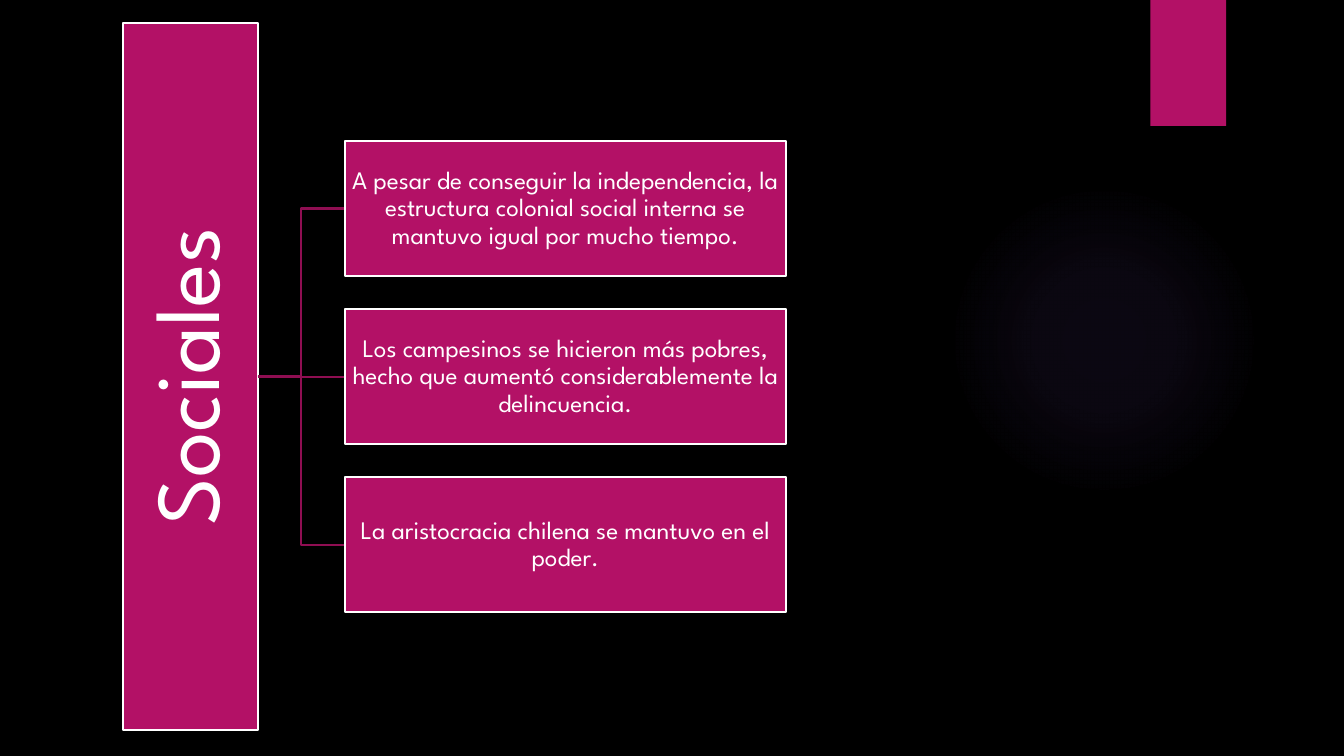
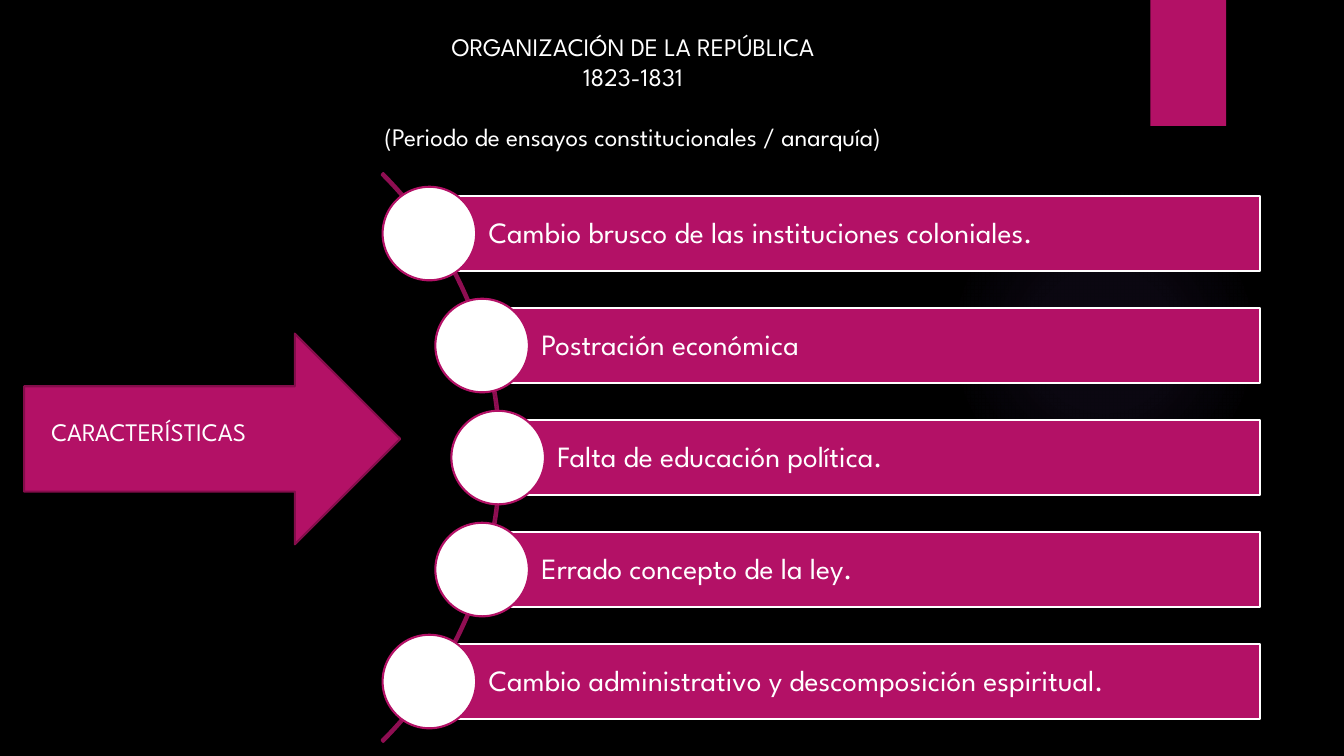
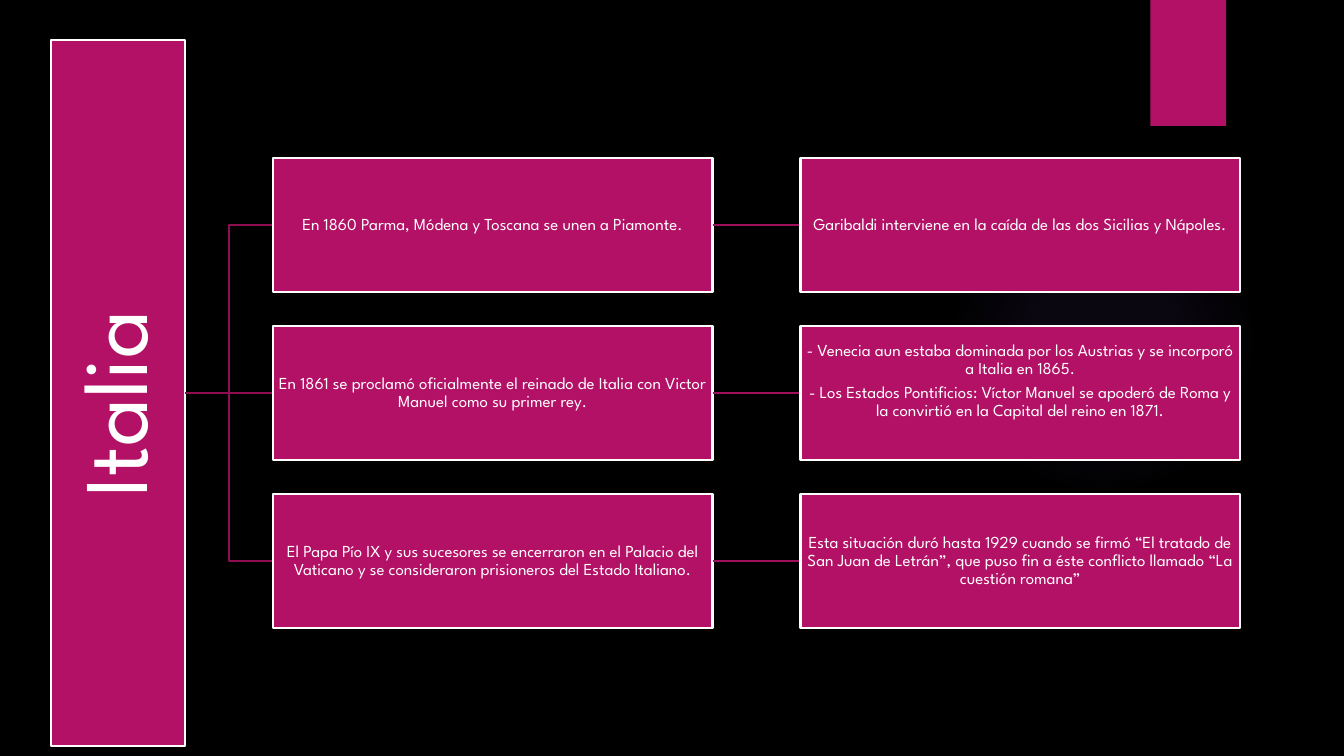
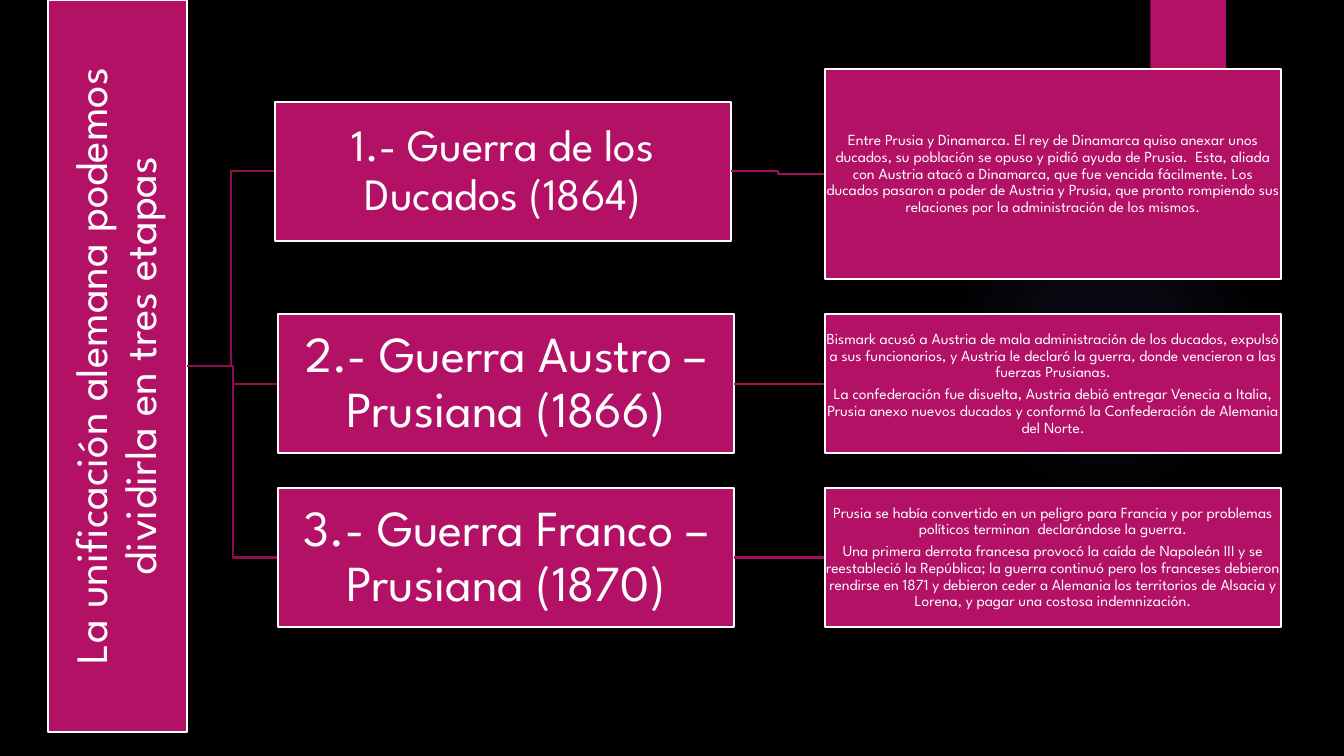
import math

import pptx
import pptx.dml.color
import pptx.enum.shapes
import pptx.enum.text
import pptx.oxml
import pptx.oxml.ns
import pptx.util

Pt = pptx.util.Pt
SHAPE = pptx.enum.shapes.MSO_SHAPE
LINK = pptx.enum.shapes.MSO_CONNECTOR
ANCHOR = pptx.enum.text.MSO_ANCHOR
ALIGN = pptx.enum.text.PP_ALIGN
NO_FIT = pptx.enum.text.MSO_AUTO_SIZE.NONE
qn = pptx.oxml.ns.qn

FONT = "League Spartan"
BLACK, WHITE, PINK = "000000", "FFFFFF", "B31166"
TRUNK, BRANCH, ARROW_EDGE = "8F0E52", "A20F5D", "840D4B"
GLOW, GLOW_STOPS = "9B6BF2", [(0, 7), (36, 6), (69, 0)]
LINE_WIDTH = 1.5


def color(value):
    return pptx.dml.color.RGBColor.from_string(value)


def set_all(obj, values):
    for name, value in values.items():
        setattr(obj, name, value)


def paint(sp, fill=None, line=None):
    for target, value in ((sp.fill, fill), (sp.line.fill, line)):
        if value:
            target.solid()
            target.fore_color.rgb = color(value)
        else:
            target.background()
    if line:
        sp.line.width = Pt(LINE_WIDTH)


def add_shape(s, kind, x, y, w, h, fill=None, line=None):
    sp = s.shapes.add_shape(kind, Pt(x), Pt(y), Pt(w), Pt(h))
    sp.shadow.inherit = False
    paint(sp, fill, line)
    return sp


def write(sp, lines, size, insets, align=ALIGN.CENTER, anchor=ANCHOR.MIDDLE, para=None):
    tf = sp.text_frame
    sides = ("margin_left", "margin_top", "margin_right", "margin_bottom")
    set_all(tf, dict(zip(sides, map(Pt, insets))))
    set_all(tf, {"word_wrap": True, "auto_size": NO_FIT, "vertical_anchor": anchor})
    if para is None:
        para = {"line_spacing": 0.9, "space_after": Pt(0.35 * size)}
    for i, line in enumerate(lines):
        p = tf.add_paragraph() if i else tf.paragraphs[0]
        set_all(p, {"alignment": align, "space_before": Pt(0), **para})
        r = p.add_run()
        r.text = line
        set_all(r.font, {"name": FONT, "size": Pt(size), "bold": False})
        r.font.color.rgb = color(WHITE)


def place(sp, x, y, w, h):
    set_all(sp, {"left": Pt(x), "top": Pt(y), "width": Pt(w), "height": Pt(h)})


def add_label(s, text, x, cy, w, h, size):
    sp = s.shapes.title
    place(sp, x + (w - h) / 2, cy - w / 2, h, w)
    sp.rotation = 270
    paint(sp, PINK, WHITE)
    write(sp, [text], size, [0.05 * size] * 4)


def add_link(s, x1, y1, x2, y2, line):
    kind = LINK.STRAIGHT if y1 == y2 else LINK.ELBOW
    c = s.shapes.add_connector(kind, Pt(x1), Pt(y1), Pt(x2), Pt(y2))
    c.line.color.rgb = color(line)
    c.line.width = Pt(LINE_WIDTH)
    c.element.spPr.append(pptx.oxml.parse_xml(
        f'<a:effectLst {pptx.oxml.ns.nsdecls("a")}/>'))


def add_tree(s, label, rows):
    add_label(s, **label)
    for row in rows:
        x1, y1 = label["x"] + label["w"], label["cy"]
        for cell, line in zip(row, (TRUNK, BRANCH)):
            x, cy, w, h = cell["box"]
            size = cell["size"]
            add_link(s, x1, y1, x, cy, line)
            sp = add_shape(s, SHAPE.RECTANGLE, x, cy - h / 2, w, h, PINK, WHITE)
            pad = 0.05 * size
            write(sp, cell["lines"], size, [pad, pad, pad, pad + cell.get("lift", 0)])
            x1, y1 = x + w, cy


def cell(box, size, *lines, lift=0):
    return {"box": box, "size": size, "lines": lines, "lift": lift}


def decorate_master(prs, s):
    bg = prs.slide_master.background.fill
    bg.solid()
    bg.fore_color.rgb = color(BLACK)
    glow = add_shape(s, SHAPE.OVAL, 677.5, 131.8, 221.8, 221.8)
    stops = "".join(
        f'<a:gs pos="{pos * 1000}"><a:srgbClr val="{GLOW}">'
        f'<a:alpha val="{alpha * 1000}"/></a:srgbClr></a:gs>'
        for pos, alpha in GLOW_STOPS)
    grad = pptx.oxml.parse_xml(
        f'<a:gradFill {pptx.oxml.ns.nsdecls("a")}><a:gsLst>{stops}</a:gsLst>'
        '<a:path path="circle"><a:fillToRect l="50000" t="50000" r="50000" b="50000"/>'
        '</a:path></a:gradFill>')
    spPr = glow.element.spPr
    spPr.replace(spPr.find(qn("a:noFill")), grad)
    tab = add_shape(s, SHAPE.RECTANGLE, 821.8, 0, 54, 90, PINK)
    for i, sp in enumerate((glow, tab)):
        sp.element.nvSpPr.cNvPr.id = 100 + i
        prs.slide_master.shapes.element.append(sp.element)


def social_slide(s):
    cy, pitch = 269, 120
    texts = [
        "A pesar de conseguir la independencia, la estructura colonial social interna se mantuvo igual por mucho tiempo.",
        "Los campesinos se hicieron más pobres, hecho que aumentó considerablemente la delincuencia.",
        "La aristocracia chilena se mantuvo en el poder.",
    ]
    label = {"text": "Sociales", "x": 88, "cy": cy, "w": 96, "h": 505, "size": 65}
    add_tree(s, label, [[cell((246.3, cy + pitch * (i - 1), 315, 96), 18, text)]
                        for i, text in enumerate(texts)])


def republic_slide(s):
    title = s.shapes.title
    place(title, 93.6, 18.7, 717, 116.6)
    write(title, ["ORGANIZACIÓN DE LA REPÚBLICA", "1823-1831",
                  "(Periodo de ensayos constitucionales / anarquía)"],
          18, (7.2, 3.6, 7.2, 3.6), anchor=ANCHOR.TOP, para={})
    title.text_frame.paragraphs[2].space_before = Pt(21.4)

    cx, cy, radius = 70.6, 326.8, 287.3
    arc = add_shape(s, SHAPE.BLOCK_ARC, cx - radius, cy - radius,
                    2 * radius, 2 * radius, line=TRUNK)
    for i, value in enumerate((189, 27, 0.003)):
        arc.adjustments[i] = value

    features = [
        "Cambio brusco de las instituciones coloniales.",
        "Postración económica",
        "Falta de educación política.",
        "Errado concepto de la ley.",
        "Cambio administrativo y descomposición espiritual.",
    ]
    right, bar, dot, pitch, orbit = 900, 53.5, 66.8, 80, 285.2
    for i, text in enumerate(features):
        dy = pitch * (i - 2)
        x, y = cx + math.sqrt(orbit ** 2 - dy ** 2), cy + dy
        sp = add_shape(s, SHAPE.RECTANGLE, x, y - bar / 2, right - x, bar, PINK, WHITE)
        write(sp, [text], 21, (42.4, 4.2, 4.2, 4.2), ALIGN.LEFT)
        add_shape(s, SHAPE.OVAL, x - dot / 2, y - dot / 2, dot, dot, WHITE, PINK)

    arrow = add_shape(s, SHAPE.RIGHT_ARROW, 17.3, 238.3, 268.6, 150.5, PINK, ARROW_EDGE)
    write(arrow, ["CARACTERÍSTICAS"], 18, (19.4, 0, 0, 11), ALIGN.LEFT, para={})


def italy_slide(s):
    cy, pitch = 280.7, 120
    texts = [
        (["En 1860 Parma, Módena y Toscana se unen a Piamonte."],
         ["Garibaldi interviene en la caída de las dos Sicilias y Nápoles."]),
        (["En 1861 se proclamó oficialmente el reinado de Italia con Victor Manuel como su primer rey."],
         ["- Venecia aun estaba dominada por los Austrias y se incorporó a Italia en 1865.",
          "- Los Estados Pontificios: Víctor Manuel se apoderó de Roma y la convirtió en la Capital del reino en 1871."]),
        (["El Papa Pío IX y sus sucesores se encerraron en el Palacio del Vaticano y se consideraron prisioneros del Estado Italiano."],
         ["Esta situación duró hasta 1929 cuando se firmó “El tratado de San Juan de Letrán”, que puso fin a éste conflicto llamado “La cuestión romana”"]),
    ]
    label = {"text": "Italia ", "x": 36.4, "cy": cy, "w": 96, "h": 504, "size": 65}
    add_tree(s, label, [
        [cell((x, cy + pitch * (i - 1), 314, 96), 12, *lines,
              lift=17 if len(lines) > 1 else 0)
         for x, lines in zip((195, 571.8), row)]
        for i, row in enumerate(texts)])


def germany_slide(s):
    w, h, x1, x2 = 325.8, 99.4, 198.6, 589.4
    y2, y3 = 274.2, 398.2
    label = {"text": "La unificación alemana podemos dividirla en tres etapas",
             "x": 34.3, "cy": 261.4, "w": 99.4, "h": 522.7, "size": 32}
    add_tree(s, label, [
        [cell((196.5, 122.4, w, h), 32, "1.- Guerra de los Ducados (1864)"),
         cell((x2, 124.3, w, 150.4), 11,
              "Entre Prusia y Dinamarca. El rey de Dinamarca quiso anexar unos ducados, su población se opuso y pidió ayuda de Prusia.  Esta, aliada con Austria atacó a Dinamarca, que fue vencida fácilmente. Los ducados pasaron a poder de Austria y Prusia, que pronto rompiendo sus relaciones por la administración de los mismos.")],
        [cell((x1, y2, w, h), 36, "2.- Guerra Austro – Prusiana (1866)"),
         cell((x2, y2, w, h), 11,
              "Bismark acusó a Austria de mala administración de los ducados, expulsó a sus funcionarios, y Austria le declaró la guerra, donde vencieron a las fuerzas Prusianas.",
              "La confederación fue disuelta, Austria debió entregar Venecia a Italia, Prusia anexo nuevos ducados y conformó la Confederación de Alemania del Norte.")],
        [cell((x1, y3, w, h), 36, "3.- Guerra Franco – Prusiana (1870)"),
         cell((x2, y3, w, h), 11,
              "Prusia se había convertido en un peligro para Francia y por problemas políticos terminan  declarándose la guerra.",
              "Una primera derrota francesa provocó la caída de Napoleón III y se reestableció la República; la guerra continuó pero los franceses debieron rendirse en 1871 y debieron ceder a Alemania los territorios de Alsacia y Lorena, y pagar una costosa indemnización.")],
    ])


def main():
    prs = pptx.Presentation()
    set_all(prs, {"slide_width": Pt(960), "slide_height": Pt(540)})
    builders = (social_slide, republic_slide, italy_slide, germany_slide)
    slides = [prs.slides.add_slide(prs.slide_layouts[5]) for _ in builders]
    decorate_master(prs, slides[0])
    for build, s in zip(builders, slides):
        build(s)
    prs.save("out.pptx")


if __name__ == "__main__":
    main()
